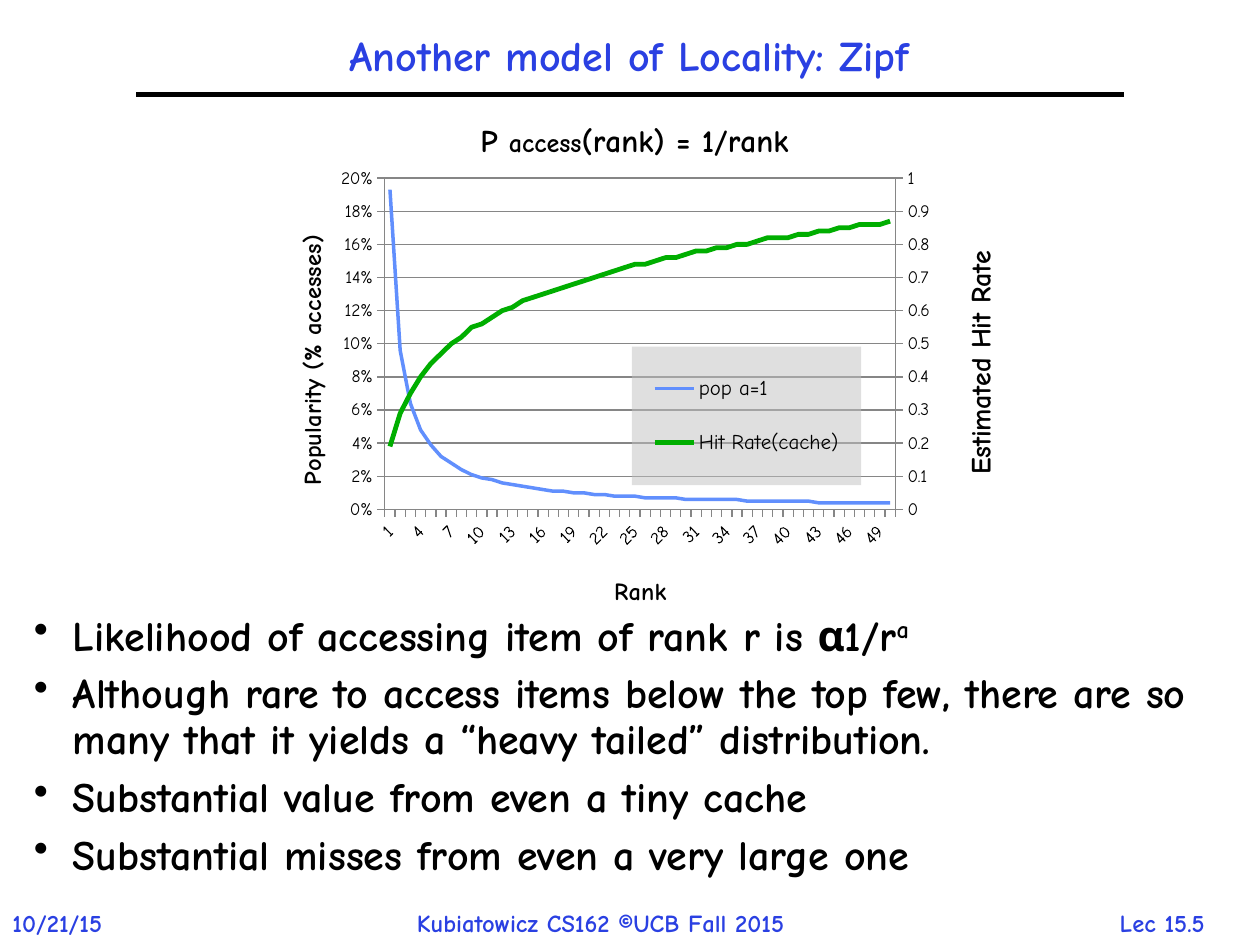
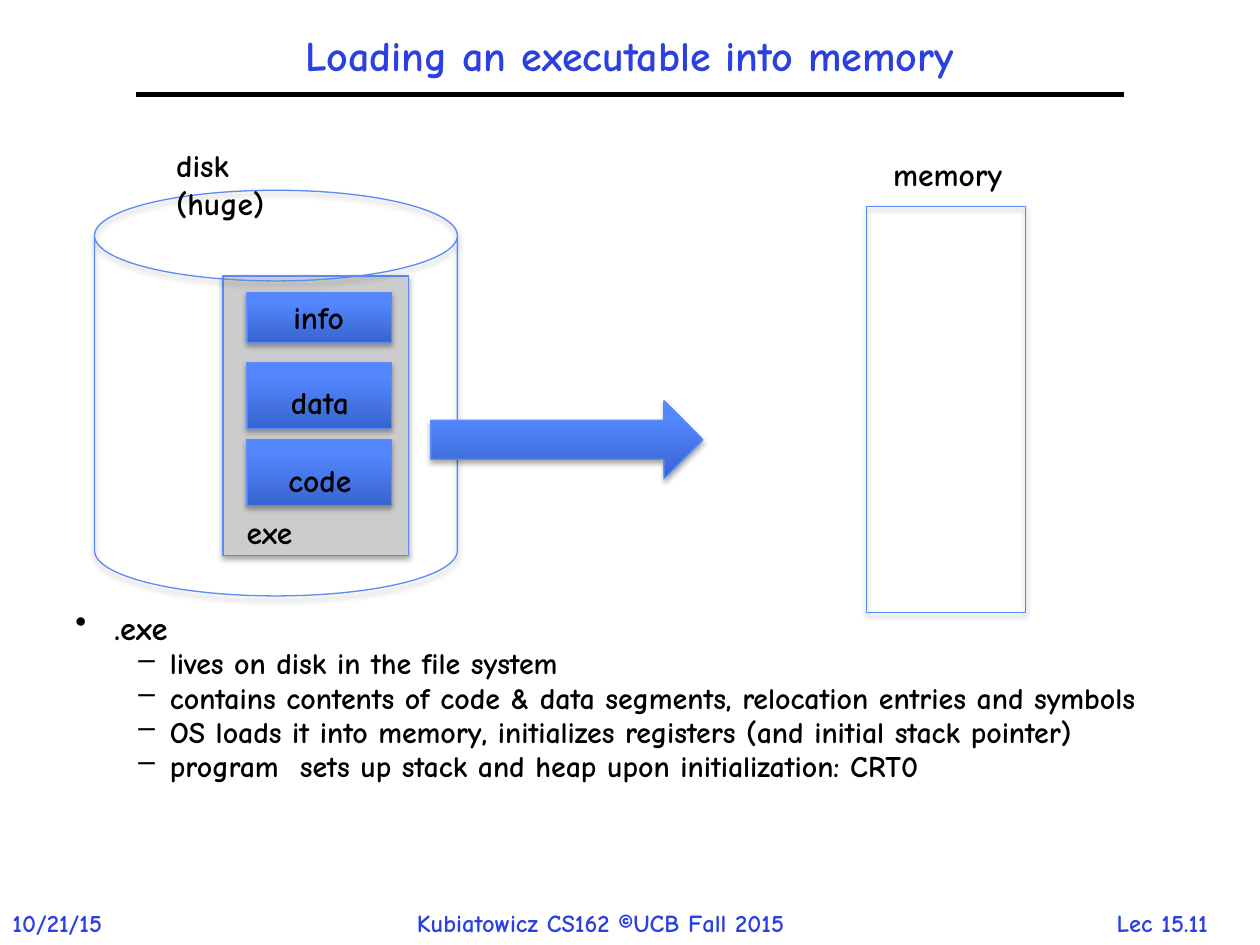
from copy import deepcopy
from dataclasses import dataclass
from itertools import accumulate

from lxml.etree import SubElement
from pptx import Presentation
from pptx.chart.data import CategoryChartData
from pptx.dml.color import RGBColor
from pptx.enum.chart import XL_CHART_TYPE, XL_LEGEND_POSITION, XL_TICK_MARK
from pptx.enum.shapes import MSO_CONNECTOR, MSO_SHAPE
from pptx.enum.text import MSO_ANCHOR, MSO_AUTO_SIZE, PP_ALIGN
from pptx.oxml import parse_xml
from pptx.oxml.ns import nsdecls, qn
from pptx.util import Pt

PX = 9144  # 100 px to the inch


@dataclass(frozen=True)
class Theme:
    font: str = "Comic Neue"
    ink: RGBColor = RGBColor.from_string("000000")
    accent: RGBColor = RGBColor.from_string("2A40E2")
    outline: RGBColor = RGBColor.from_string("5B8AFB")
    panel: RGBColor = RGBColor.from_string("CCCCCC")
    grid: RGBColor = RGBColor.from_string("868686")
    popularity: RGBColor = RGBColor.from_string("618FFD")
    hit_rate: RGBColor = RGBColor.from_string("00AE00")
    gradient: tuple = ((0, "3764CE"), (80, "5487FF"), (100, "5688FF"))
    title_size: float = 24
    label_size: float = 18
    footer_size: float = 14
    tick_size: float = 10
    legend_size: float = 12


theme = Theme()


def write(frame, text, size, color=theme.ink, wrap=False):
    """Fill a text frame and give every run the deck's bold face."""
    frame.text = text
    frame.word_wrap = wrap
    frame.auto_size = MSO_AUTO_SIZE.NONE
    for para in frame.paragraphs:
        for span in para.runs:
            span.font.name = theme.font
            span.font.size = Pt(size)
            span.font.bold = True
            span.font.color.rgb = color


def place_in_chart(part, inner=False, **fractions):
    """Pin a chart part at x, y (and w, h) given as fractions of the chart."""
    layout = part.find(qn("c:layout"))
    if layout is not None:
        part.remove(layout)
    layout = parse_xml(f"<c:layout {nsdecls('c')}/>")
    leaders = [child for child in part if child.tag in (qn("c:tx"), qn("c:legendPos"))]
    part.insert(len(leaders), layout)
    manual = SubElement(layout, qn("c:manualLayout"))
    if inner:
        SubElement(manual, qn("c:layoutTarget")).set("val", "inner")
    for side in ("x", "y"):
        SubElement(manual, qn(f"c:{side}Mode")).set("val", "edge")
    for side, value in fractions.items():
        SubElement(manual, qn(f"c:{side}")).set("val", str(value))


deck = Presentation()
deck.slide_width, deck.slide_height = 1000 * PX, 750 * PX

# Each slide: title, number, body box, line spacing, lines of (level, size, text)
slides = [
    ("Another model of Locality: Zipf", "Lec 15.5", (17, 483, 992, 186), 0.9, [
        (0, 24, "Likelihood of accessing item of rank r is α1/r"),
        (0, 24, "Although rare to access items below the top few, there are so many "
                "that it yields a “heavy tailed” distribution."),
        (0, 24, "Substantial value from even a tiny cache"),
        (0, 24, "Substantial misses from even a very large one"),
    ]),
    ("Loading an executable into memory", "Lec 15.11", (50, 486, 900, 204), 0.7, [
        (0, 18.6, ".exe"),
        (1, 17.1, "lives on disk in the file system"),
        (1, 17.1, "contains contents of code & data segments, relocation entries and symbols"),
        (1, 17.1, "OS loads it into memory, initializes registers (and initial stack pointer)"),
        (1, 17.1, "program  sets up stack and heap upon initialization: CRT0"),
    ]),
]
bullets = [("•", 31, -31), ("–", 75, -25)]
pages, bodies = [], []

for title_text, number, body_box, line_spacing, lines in slides:
    page = deck.slides.add_slide(deck.slide_layouts[5])
    pages.append(page)

    title = page.shapes.title
    title.left, title.top, title.width, title.height = (n * PX for n in (108, 17, 783, 58))
    write(title.text_frame, title_text, theme.title_size, theme.accent, wrap=True)
    title.text_frame.vertical_anchor = MSO_ANCHOR.MIDDLE
    title.text_frame.paragraphs[0].alignment = PP_ALIGN.CENTER
    title.text_frame.paragraphs[0].line_spacing = 0.9

    rule = page.shapes.add_connector(MSO_CONNECTOR.STRAIGHT, 108 * PX, 75 * PX, 892 * PX, 75 * PX)
    rule.line.color.rgb = theme.ink
    rule.line.width = Pt(3)
    SubElement(rule._element.spPr, qn("a:effectLst"))

    for text, left, width, align in [
        ("10/21/15", 0, 112, PP_ALIGN.LEFT),
        ("Kubiatowicz CS162 ©UCB Fall 2015", 321, 361, PP_ALIGN.LEFT),
        (number, 856, 133, PP_ALIGN.CENTER),
    ]:
        footer = page.shapes.add_textbox(left * PX, 716 * PX, width * PX, 34 * PX)
        write(footer.text_frame, text, theme.footer_size, theme.accent)
        footer.text_frame.paragraphs[0].alignment = align

    body = page.shapes.add_textbox(*(n * PX for n in body_box))
    bodies.append(body)
    write(body.text_frame, "\n".join(text for _, _, text in lines), lines[0][1], wrap=True)
    for para, (level, size, _) in zip(body.text_frame.paragraphs, lines):
        mark, margin, indent = bullets[level]
        para.level = level
        para.line_spacing = line_spacing
        para.space_before = Pt(0.3 * size)
        para.runs[0].font.size = Pt(size)
        properties = para._p.get_or_add_pPr()
        properties.set("marL", str(margin * PX))
        properties.set("indent", str(indent * PX))
        SubElement(properties, qn("a:buChar")).set("char", mark)

zipf_page, loading_page = pages

# Zipf slide: exponent after the first bullet
first_bullet = bodies[0].text_frame.paragraphs[0]
exponent = first_bullet.add_run()
exponent.text = "a"
exponent.font.name = theme.font
exponent.font.size = Pt(24)
exponent.font.bold = True
exponent.font.color.rgb = theme.ink
exponent._r.get_or_add_rPr().set("baseline", "30000")

# Zipf slide: popularity 1/rank over 100 items, and the hit rate it adds up to
weights = [1 / rank for rank in range(1, 101)]
shares = [weight / sum(weights) for weight in weights]
data = CategoryChartData()
data.categories = [str(rank) for rank in range(1, 51)]
data.add_series("pop a=1", [round(share, 3) for share in shares[:50]])
data.add_series("Hit Rate(cache)", [round(total, 2) for total in accumulate(shares[:50])])
chart = zipf_page.shapes.add_chart(
    XL_CHART_TYPE.LINE, *(n * PX for n in (208, 72, 590, 423)), data).chart
chart.font.name = theme.font
chart.font.size = Pt(theme.tick_size)
chart.font.color.rgb = theme.ink

chart.has_title = True
heading = chart.chart_title.text_frame.paragraphs[0]
for text, size in [("P ", 18), ("access", 15), ("(rank) = 1/rank", 18)]:
    span = heading.add_run()
    span.text = text
    span.font.name = theme.font
    span.font.size = Pt(size)
    span.font.bold = True
    span.font.color.rgb = theme.ink
place_in_chart(chart.chart_title._element, x=0.29, y=0.05)

rank_axis, popularity_axis = chart.category_axis, chart.value_axis
for axis, text, x, y in [
    (rank_axis, "Rank", 0.47, 0.9),
    (popularity_axis, "Popularity (% accesses)", 0.04, 0.26),
]:
    write(axis.axis_title.text_frame, text, 14)
    place_in_chart(axis.axis_title._element, x=x, y=y)
    axis.major_tick_mark = XL_TICK_MARK.OUTSIDE
    axis.format.line.color.rgb = theme.grid
    axis.tick_labels.font.size = Pt(theme.tick_size)
popularity_axis.minimum_scale = 0
popularity_axis.maximum_scale = 0.2
popularity_axis.major_unit = 0.02
popularity_axis.tick_labels.number_format = "0%"
popularity_axis.tick_labels.number_format_is_linked = False
popularity_axis.major_gridlines.format.line.color.rgb = theme.grid

plot = chart.plots[0]
plot.vary_by_categories = False
for series, color, weight in zip(plot.series, (theme.popularity, theme.hit_rate), (2, 2.75)):
    series.smooth = False
    series.format.line.color.rgb = color
    series.format.line.width = Pt(weight)

chart.has_legend = True
legend = chart.legend
legend.position = XL_LEGEND_POSITION.RIGHT
legend.include_in_layout = True
legend.font.size = Pt(theme.legend_size)
legend_element = legend._element
place_in_chart(legend_element, x=0.5, y=0.48, w=0.31, h=0.26)
legend_element.find(qn("c:txPr")).addprevious(parse_xml(
    f'<c:spPr {nsdecls("c", "a")}><a:solidFill><a:srgbClr val="C0C0C0">'
    '<a:alpha val="50000"/></a:srgbClr></a:solidFill></c:spPr>'))

# Zipf slide: second series on a right-hand axis
rank_element, popularity_element = rank_axis._element, popularity_axis._element
rank_element.xpath("c:txPr/a:bodyPr")[0].set("rot", "-2700000")
popularity_element.xpath("c:title//a:bodyPr")[0].set("rot", "-5400000")
label_skip = parse_xml(f'<c:tickLblSkip {nsdecls("c")} val="3"/>')
rank_element.find(qn("c:noMultiLvlLbl")).addprevious(label_skip)

left_lines = plot._element
right_lines = deepcopy(left_lines)
left_lines.remove(left_lines.findall(qn("c:ser"))[1])
right_lines.remove(right_lines.findall(qn("c:ser"))[0])
left_lines.addnext(right_lines)
hidden_axis, hit_axis = deepcopy(rank_element), deepcopy(popularity_element)
popularity_element.addnext(hit_axis)
hit_axis.addnext(hidden_axis)

for axis_id, value in zip(right_lines.findall(qn("c:axId")), ("501", "502")):
    axis_id.set("val", value)
for axis, own, other in [(hidden_axis, "501", "502"), (hit_axis, "502", "501")]:
    axis.find(qn("c:axId")).set("val", own)
    axis.find(qn("c:crossAx")).set("val", other)
hidden_axis.find(qn("c:delete")).set("val", "1")
hidden_axis.remove(hidden_axis.find(qn("c:title")))
hit_axis.remove(hit_axis.find(qn("c:majorGridlines")))
for tag, value in [("axPos", "r"), ("crosses", "max"), ("majorUnit", "0.1")]:
    hit_axis.find(qn(f"c:{tag}")).set("val", value)
hit_axis.xpath("c:scaling/c:max")[0].set("val", "1")
hit_axis.find(qn("c:numFmt")).set("formatCode", "General")
hit_axis.xpath("c:title//a:t")[0].text = "Estimated Hit Rate"
hit_axis.xpath("c:title//a:rPr")[0].set("sz", "1600")
place_in_chart(hit_axis.find(qn("c:title")), x=0.94, y=0.29)
place_in_chart(left_lines.getparent(), inner=True, x=0.166, y=0.164, w=0.69, h=0.622)

# Loading slide: disk with the executable, an arrow, and memory
executable = loading_page.shapes.add_group_shape()
segments = [("info", 232, 40, 223, 232), ("data", 288, 52, 221, 299), ("code", 349, 52, 219, 361)]
drawing = [
    (loading_page, MSO_SHAPE.CAN, (75, 151, 288, 322), None),
    (loading_page, MSO_SHAPE.RECTANGLE, (688, 164, 126, 322), None),
    (executable, MSO_SHAPE.RECTANGLE, (177, 219, 147, 222), "panel"),
    *((executable, MSO_SHAPE.RECTANGLE, (196, top, 115, height), "gradient")
      for _, top, height, _, _ in segments),
    (loading_page, MSO_SHAPE.RIGHT_ARROW, (342, 318, 216, 62), "gradient"),
]
stops = "".join(f'<a:gs pos="{position * 1000}"><a:srgbClr val="{color}"/></a:gs>'
                for position, color in theme.gradient)
for owner, kind, box, fill in drawing:
    shape = owner.shapes.add_shape(kind, *(n * PX for n in box))
    shape.line.color.rgb = theme.outline
    shape.line.width = Pt(0.75)
    if fill == "panel":
        shape.fill.solid()
        shape.fill.fore_color.rgb = theme.panel
    elif fill == "gradient":
        shape._element.spPr.find(qn("a:prstGeom")).addnext(parse_xml(
            f'<a:gradFill {nsdecls("a")} rotWithShape="1"><a:gsLst>{stops}</a:gsLst>'
            '<a:lin ang="16200000" scaled="0"/></a:gradFill>'))
    else:
        shape.fill.background()
    shape.shadow.inherit = False
    shape._element.spPr.find(qn("a:effectLst")).append(parse_xml(
        f'<a:outerShdw {nsdecls("a")} blurRad="40000" dist="23000" dir="5400000" rotWithShape="0">'
        '<a:srgbClr val="000000"><a:alpha val="35000"/></a:srgbClr></a:outerShdw>'))

for owner, text, left, top, width, wrap in [
    (loading_page, "disk (huge)", 130, 111, 133, True),
    (loading_page, "memory", 699, 118, 107, False),
    (executable, "exe", 186, 402, 56, False),
    *((executable, name, left, top, 70, False) for name, _, _, left, top in segments),
]:
    label = owner.shapes.add_textbox(left * PX, top * PX, width * PX, 40 * PX)
    write(label.text_frame, text, theme.label_size, wrap=wrap)

deck.save("out.pptx")
